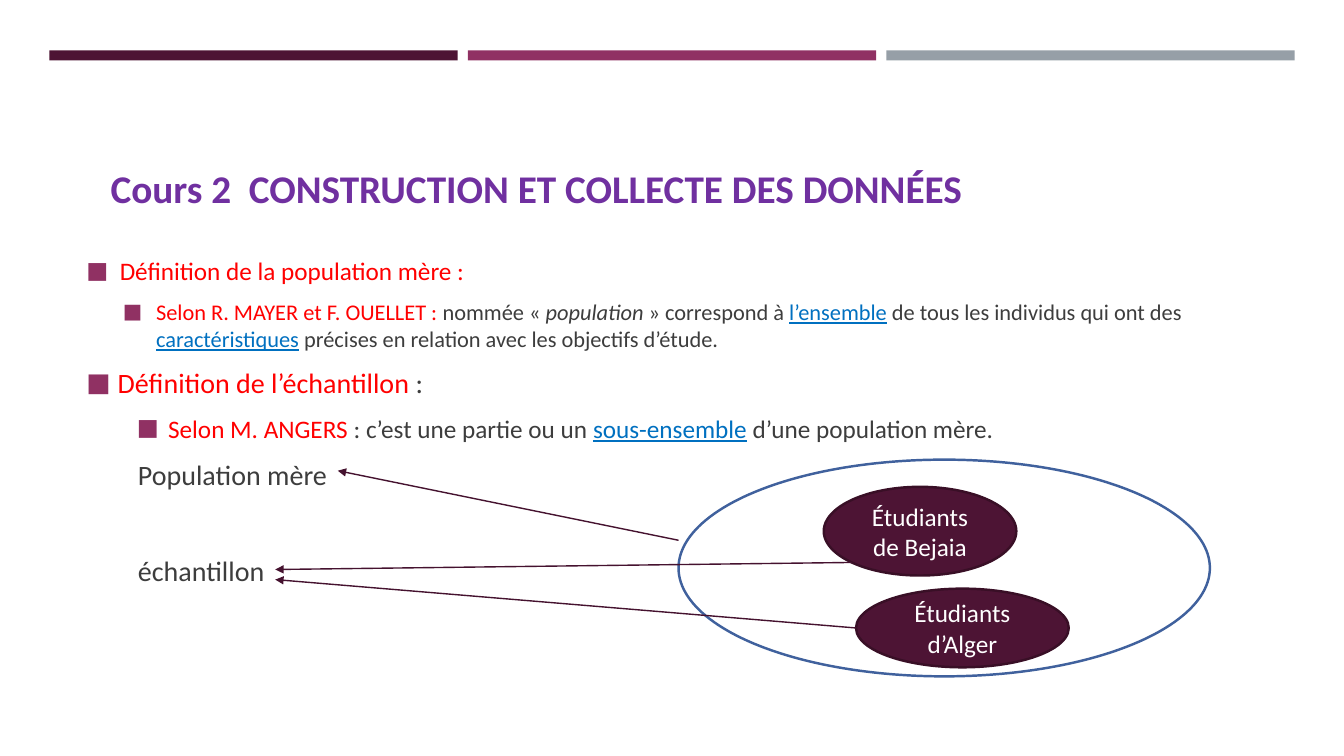
from lxml import etree
from pptx import Presentation
from pptx.dml.color import RGBColor
from pptx.enum.shapes import MSO_CONNECTOR, MSO_SHAPE
from pptx.enum.text import MSO_ANCHOR, PP_ALIGN
from pptx.oxml.ns import qn
from pptx.util import Inches, Pt

RECTANGLE, OVAL = MSO_SHAPE.RECTANGLE, MSO_SHAPE.OVAL
STRAIGHT = MSO_CONNECTOR.STRAIGHT
TOP, MIDDLE, BOTTOM = MSO_ANCHOR.TOP, MSO_ANCHOR.MIDDLE, MSO_ANCHOR.BOTTOM
CENTER = PP_ALIGN.CENTER

FONT = "Calibri"
WHITE = RGBColor(0xFF, 0xFF, 0xFF)
PLUM = RGBColor(0x4D, 0x14, 0x34)
DARK_PLUM = RGBColor(0x39, 0x0F, 0x26)
ARROW_PLUM = RGBColor(0x45, 0x12, 0x2F)
MAGENTA = RGBColor(0x90, 0x31, 0x63)
GREY = RGBColor(0x96, 0x9F, 0xA7)
PURPLE = RGBColor(0x70, 0x30, 0xA0)
RED = RGBColor(0xFF, 0x00, 0x00)
BLUE = RGBColor(0x00, 0x70, 0xC0)
OUTLINE_BLUE = RGBColor(0x40, 0x61, 0x9D)
TEXT = RGBColor(0x3D, 0x3D, 0x3D)

PLAIN = {"color": TEXT}
TERM = {"color": RED}
KEYWORD = {"color": BLUE, "underline": True}
ITALIC = {"color": TEXT, "italic": True}

# Each paragraph: size, left indent, hanging indent (0 = no bullet), space before, spans
BODY = [
    (18, 0.33, 0.33, 0, [("Définition de la population mère :", TERM)]),
    (16, 0.69, 0.33, 3.2, [
        ("Selon R. MAYER et F. OUELLET : ", TERM), ("nommée « ", PLAIN),
        ("population", ITALIC), (" » correspond à ", PLAIN),
        ("l’ensemble", KEYWORD), (" de tous les individus qui ont des ", PLAIN),
        ("caractéristiques", KEYWORD),
        (" précises en relation avec les objectifs d’étude.", PLAIN)]),
    (20, 0.31, 0.31, 4, [("Définition de l’échantillon ", TERM), (":", PLAIN)]),
    (18, 0.81, 0.31, 3.6, [
        ("Selon M. ANGERS ", TERM), (": c’est une partie ou un ", PLAIN),
        ("sous-ensemble", KEYWORD), (" d’une population mère.", PLAIN)]),
    (20, 0.51, 0, 4, [("Population mère", PLAIN)]),
    (20, 0.51, 0, 38.4, [("échantillon", PLAIN)]),
]


def add_span(para, text, size, formats):
    span = para.add_run()
    span.text = text
    values = {"name": FONT, "size": Pt(size), **formats}
    span.font.color.rgb = values.pop("color")
    for name, value in values.items():
        setattr(span.font, name, value)


def add_frame(slide, box, anchor):
    frame = slide.shapes.add_textbox(*map(Inches, box)).text_frame
    frame.word_wrap = True
    frame.vertical_anchor = anchor
    return frame


def add_filled(slide, kind, box, fill, line=None):
    shape = slide.shapes.add_shape(kind, *map(Inches, box))
    shape.shadow.inherit = False
    shape.fill.solid()
    shape.fill.fore_color.rgb = fill
    if line is None:
        shape.line.fill.background()
    else:
        shape.line.color.rgb = line
        shape.line.width = Pt(1.75)
    return shape


def add_arrow(slide, start, end):
    arrow = slide.shapes.add_connector(STRAIGHT, *map(Inches, start + end))
    arrow.line.color.rgb = ARROW_PLUM
    arrow.line.width = Pt(1)
    etree.SubElement(arrow.line._get_or_add_ln(), qn("a:tailEnd"), type="triangle")
    etree.SubElement(arrow._element.spPr, qn("a:effectLst"))


def set_indent(para, left, hanging):
    properties = para._p.get_or_add_pPr()
    properties.set("marL", str(Inches(left)))
    properties.set("indent", str(-Inches(hanging)))
    if hanging:
        color = etree.SubElement(properties, qn("a:buClr"))
        etree.SubElement(color, qn("a:srgbClr"), val=str(MAGENTA))
        etree.SubElement(properties, qn("a:buSzPct"), val="92000")
        etree.SubElement(properties, qn("a:buFont"), typeface=FONT)
        etree.SubElement(properties, qn("a:buChar"), char="■")


def add_top_bars(slide, box):
    left, top, width, height = box
    gap = 0.1
    bar_width = (width - 2 * gap) / 3
    for index, color in enumerate((PLUM, MAGENTA, GREY)):
        bar_left = left + index * (bar_width + gap)
        add_filled(slide, RECTANGLE, (bar_left, top, bar_width, height), color)


def add_title(slide, box):
    para = add_frame(slide, box, BOTTOM).paragraphs[0]
    add_span(para, "Cours 2  CONSTRUCTION ET COLLECTE DES DONNÉES", 28,
             {"color": PURPLE, "bold": True})


def add_definitions(slide, box):
    frame = add_frame(slide, box, TOP)
    frame.margin_top = Inches(0.59)
    for index, (size, left, hanging, before, spans) in enumerate(BODY):
        para = frame.add_paragraph() if index else frame.paragraphs[0]
        para.space_before, para.space_after = Pt(before), Pt(6)
        set_indent(para, left, hanging)
        for text, formats in spans:
            add_span(para, text, size, formats)


def add_population(slide, box):
    left, top, width, height = box
    add_filled(slide, OVAL, box, WHITE, OUTLINE_BLUE)

    # Samples inside the population
    samples = [("Étudiants de Bejaia", 1.44, 0.27, 1.91, 0.88),
               ("Étudiants d’Alger", 1.76, 1.28, 2.11, 0.78)]
    for text, dx, dy, sample_width, sample_height in samples:
        sample = add_filled(slide, OVAL, (left + dx, top + dy, sample_width, sample_height),
                            PLUM, DARK_PLUM)
        frame = sample.text_frame
        frame.word_wrap = True
        frame.vertical_anchor = MIDDLE
        frame.paragraphs[0].alignment = CENTER
        add_span(frame.paragraphs[0], text, 18, {"color": WHITE})

    # Arrows to the labels on the left
    arrows = [((0, 0.8), (-3.38, 0.11)),
              ((1.72, 1.02), (-4, 1.09)),
              ((1.76, 1.67), (-4, 1.19))]
    for start, end in arrows:
        add_arrow(slide, *((left + x, top + y) for x, y in (start, end)))


def main():
    deck = Presentation()
    deck.slide_width, deck.slide_height = Inches(13.33), Inches(7.5)
    slide = deck.slides.add_slide(deck.slide_layouts[6])
    add_top_bars(slide, (0.49, 0.5, 12.35, 0.1))
    add_title(slide, (1, 0.68, 11.33, 1.47))
    add_definitions(slide, (0.76, 1.94, 11.87, 4.88))
    add_population(slide, (6.73, 4.56, 5.27, 2.15))
    deck.save("out.pptx")


if __name__ == "__main__":
    main()
